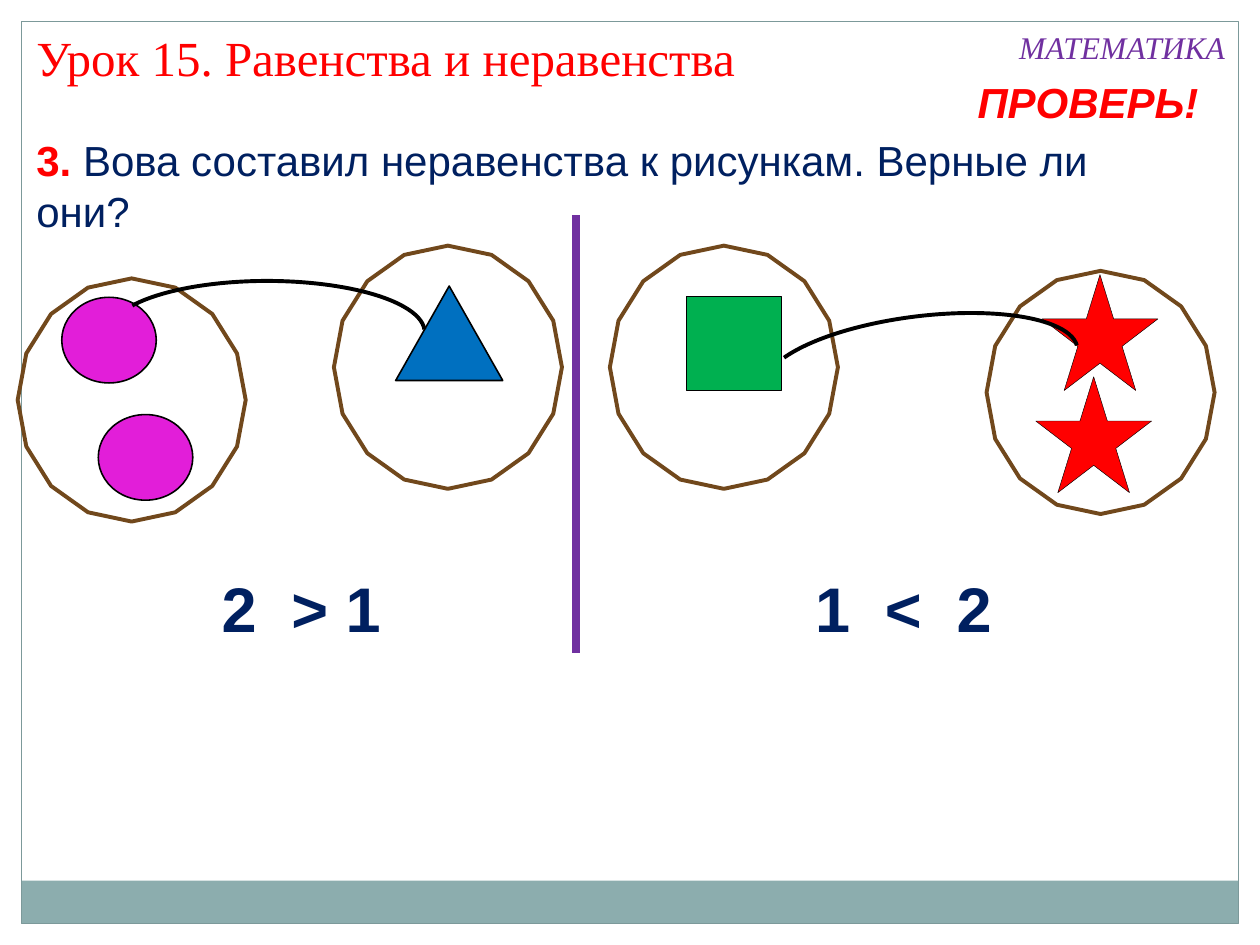
from pptx import Presentation
from pptx.dml.color import RGBColor
from pptx.enum.shapes import MSO_CONNECTOR, MSO_SHAPE
from pptx.oxml.ns import qn
from pptx.util import Inches, Pt
from lxml import etree

RED = RGBColor(0xFF, 0x00, 0x00)
NAVY = RGBColor(0x00, 0x20, 0x60)
PURPLE = RGBColor(0x70, 0x30, 0xA0)
MAGENTA = RGBColor(0xE2, 0x1E, 0xD9)
BLUE = RGBColor(0x00, 0x70, 0xC0)
GREEN = RGBColor(0x00, 0xB0, 0x50)
BROWN = RGBColor(0x71, 0x48, 0x1C)
BLACK = RGBColor(0x00, 0x00, 0x00)
SAGE = RGBColor(0x8C, 0xAD, 0xAE)
FRAME_GRAY = RGBColor(0x7C, 0x99, 0x9A)

WREATH_SIZE = (1.81, 1.93)
ARC_SIZE = (2.5, 0.81)


def add_text(slide, box, *runs, size, font="Arial", bold=False, italic=False, wrap=True):
    """Place one paragraph; each run is (text, colour) or (text, colour, bold)."""
    frame = slide.shapes.add_textbox(*map(Inches, box)).text_frame
    frame.word_wrap = wrap
    for text, color, *run_bold in runs:
        run = frame.paragraphs[0].add_run()
        run.text = text
        run.font.name = font
        run.font.size = Pt(size)
        run.font.bold = run_bold[0] if run_bold else bold
        run.font.italic = italic
        run.font.color.rgb = color


def add_figure(slide, kind, box, fill=None, line=None, width=0.75, adjustments=()):
    figure = slide.shapes.add_shape(kind, *map(Inches, box))
    figure.shadow.inherit = False
    for index, value in enumerate(adjustments):
        figure.adjustments[index] = value
    if fill is None:
        figure.fill.background()
    else:
        figure.fill.solid()
        figure.fill.fore_color.rgb = fill
    if line is None:
        figure.line.fill.background()
    else:
        figure.line.color.rgb = line
        figure.line.width = Pt(width)
    return figure


def add_page_frame(slide, left, top, width, height):
    band = 0.34
    add_figure(slide, MSO_SHAPE.RECTANGLE, (left, top + height - band, width, band), fill=SAGE)
    add_figure(slide, MSO_SHAPE.RECTANGLE, (left, top, width, height), line=FRAME_GRAY)


def add_header(slide, left, top):
    add_text(slide, (left, top, 7.8, 0.57), ("Урок 15. Равенства и неравенства", RED),
             size=28, font="Times New Roman")
    add_text(slide, (left + 7.8, top, 1.85, 0.4), ("МАТЕМАТИКА", PURPLE),
             size=18, font="Times New Roman", italic=True, wrap=False)
    add_text(slide, (left + 7.47, top + 0.39, 2.08, 0.5), ("ПРОВЕРЬ!", RED),
             size=24, bold=True, italic=True)
    add_text(slide, (left, top + 0.85, 8.95, 0.91), ("3. ", RED, True),
             ("Вова составил неравенства к рисункам. Верные ли они?", NAVY), size=24)


def add_set(slide, left, top, kind, size, fill, outline, offsets):
    """Draw equal figures at offsets inside a wreath at left, top."""
    for dx, dy in offsets:
        add_figure(slide, kind, (left + dx, top + dy, *size), fill, BLACK, outline)
    add_figure(slide, MSO_SHAPE.STAR_8_POINT, (left, top, *WREATH_SIZE),
               line=BROWN, width=2.25, adjustments=[0.5])


def add_comparison(slide, sets, arc_at, inequality, inequality_box, tilt=0):
    """Draw two sets, the arc pairing their figures, and the inequality below."""
    for figure_set in sets:
        add_set(slide, *figure_set)
    arc = add_figure(slide, MSO_SHAPE.ARC, (*arc_at, *ARC_SIZE), line=BLACK, width=2.25,
                     adjustments=[114.66, 215.44])
    arc.rotation = tilt
    add_text(slide, inequality_box, (inequality, NAVY), size=36, bold=True, wrap=False)


def add_divider(slide, x, top, bottom):
    divider = slide.shapes.add_connector(
        MSO_CONNECTOR.STRAIGHT, Inches(x), Inches(top), Inches(x), Inches(bottom))
    divider.line.color.rgb = PURPLE
    divider.line.width = Pt(4.5)
    etree.SubElement(divider._element.spPr, qn("a:effectLst"))


def main():
    deck = Presentation()
    deck.slide_width, deck.slide_height = Inches(10), Inches(7.5)
    slide = deck.slides.add_slide(deck.slide_layouts[6])

    add_page_frame(slide, 0.17, 0.17, 9.66, 7.16)
    add_header(slide, 0.19, 0.17)
    add_divider(slide, 4.57, 1.71, 5.18)

    circles = (0.14, 2.21, MSO_SHAPE.OVAL, (0.75, 0.68), MAGENTA, 0.9,
               [(0.35, 0.15), (0.64, 1.08)])
    triangle = (2.65, 1.95, MSO_SHAPE.ISOSCELES_TRIANGLE, (0.85, 0.75), BLUE, 0.9,
                [(0.49, 0.32)])
    square = (4.84, 1.95, MSO_SHAPE.RECTANGLE, (0.75, 0.75), GREEN, 0.25, [(0.61, 0.4)])
    stars = (7.83, 2.15, MSO_SHAPE.STAR_5_POINT, (0.92, 0.92), RED, 0.25,
             [(0.44, 0.03), (0.39, 0.84)])

    add_comparison(slide, [circles, triangle], (0.87, 2.23), "2  > 1", (1.66, 4.47, 1.48, 0.71))
    add_comparison(slide, [square, stars], (6.06, 2.51), "1  <  2", (6.37, 4.47, 1.62, 0.71),
                   tilt=352.9)
    deck.save("out.pptx")


if __name__ == "__main__":
    main()
